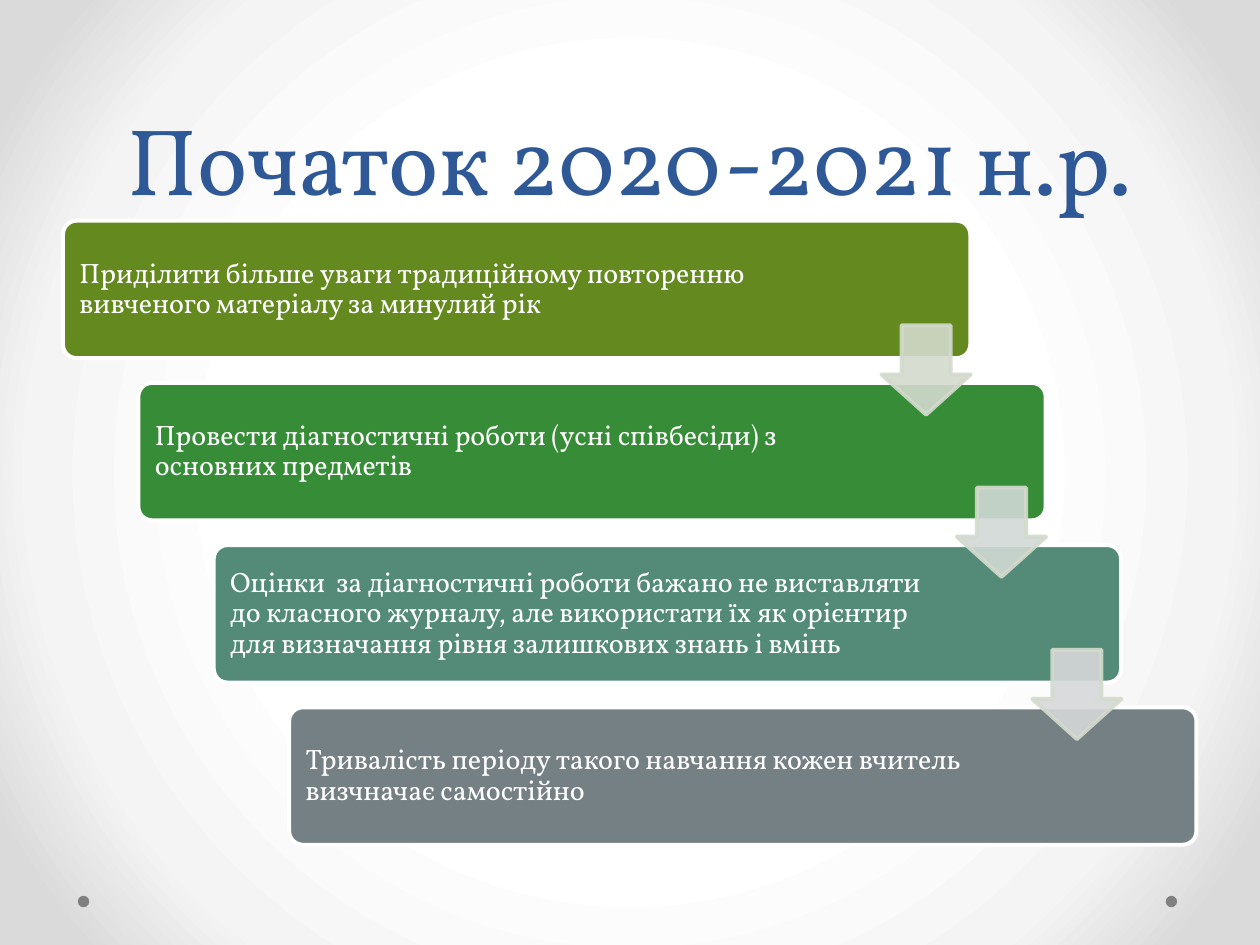
from lxml import etree
from pptx import Presentation
from pptx.dml.color import RGBColor
from pptx.enum.shapes import MSO_SHAPE
from pptx.enum.text import MSO_ANCHOR, PP_ALIGN
from pptx.oxml import parse_xml
from pptx.oxml.ns import nsdecls, qn
from pptx.util import Cm, Pt

ROUNDED, DOWN_ARROW, DOT = MSO_SHAPE.ROUNDED_RECTANGLE, MSO_SHAPE.DOWN_ARROW, MSO_SHAPE.OVAL
MIDDLE, BOTTOM = MSO_ANCHOR.MIDDLE, MSO_ANCHOR.BOTTOM
LEFT, CENTER = PP_ALIGN.LEFT, PP_ALIGN.CENTER

COLORS = {"title": "2F5897", "white": "FFFFFF", "dot": "808080", "arrow_line": "D3DACD"}
BACKDROP = [(50, "FFFFFF"), (76, "F4F4F4"), (92, "DADADA")]

# Step text, box colour, colour of the arrow to the next step
STEPS = [
    ("Приділити більше уваги традиційному повторенню вивченого матеріалу за минулий рік",
     "63891F", "D3DACD"),
    ("Провести діагностичні роботи (усні співбесіди) з основних предметів",
     "378D37", "D2D9D5"),
    ("Оцінки  за діагностичні роботи бажано не виставляти до класного журналу, "
     "але використати їх як орієнтир для визначання рівня залишкових знань і вмінь",
     "538B78", "D6D8D9"),
    ("Тривалість періоду такого навчання кожен вчитель визчначає самостійно",
     "758085", None),
]
STEP_LEFT, STEP_TOP, STEP_WIDTH, STEP_HEIGHT = 1.27, 4.45, 18.29, 2.77
SHIFT_X, SHIFT_Y = 1.52, 3.27
ARROW_X, ARROW_Y, ARROW_SIZE = 16.5, 2.11, 1.8

TITLE_FORMAT = {
    "frame": {"word_wrap": True, "vertical_anchor": BOTTOM},
    "paragraph": {"alignment": CENTER, "line_spacing": Pt(58)},
    "font": {"name": "Vollkorn", "size": Pt(54)},
    "color": COLORS["title"],
}
STEP_FORMAT = {
    "frame": {"word_wrap": True, "vertical_anchor": MIDDLE,
              "margin_left": Cm(0.25), "margin_right": Cm(3.58),
              "margin_top": Cm(0.25), "margin_bottom": Cm(0.25)},
    "paragraph": {"alignment": LEFT, "line_spacing": 0.9},
    "font": {"name": "Vollkorn", "size": Pt(16)},
    "color": COLORS["white"],
}


def write(shape, text, look):
    frame = shape.text_frame
    paragraph = frame.paragraphs[0]
    run = paragraph.add_run()
    run.text = text
    for target, part in ((frame, "frame"), (paragraph, "paragraph"), (run.font, "font")):
        for attribute, value in look[part].items():
            setattr(target, attribute, value)
    run.font.color.rgb = RGBColor.from_string(look["color"])


def add_filled(kind, box, fill, line=None, adjustments=()):
    """Add a flat preset shape; box is left, top, width, height in cm."""
    shape = slide.shapes.add_shape(kind, *map(Cm, box))
    shape.shadow.inherit = False
    shape.fill.solid()
    shape.fill.fore_color.rgb = RGBColor.from_string(fill)
    if line:
        shape.line.color.rgb = RGBColor.from_string(line)
        shape.line.width = Pt(2.25)
    else:
        shape.line.fill.background()
    for index, value in enumerate(adjustments):
        shape.adjustments[index] = value
    return shape


prs = Presentation()
prs.slide_width, prs.slide_height = Cm(25.4), Cm(19.05)
slide = prs.slides.add_slide(prs.slide_layouts[6])

# Radial background
slide.background.fill.gradient()
stops = "".join(f'<a:gs pos="{position * 1000}"><a:srgbClr val="{color}"/></a:gs>'
                for position, color in BACKDROP)
radial = parse_xml(
    f'<a:gradFill {nsdecls("a")} rotWithShape="1"><a:gsLst>{stops}</a:gsLst>'
    '<a:path path="circle"><a:fillToRect l="50000" t="50000" r="50000" b="50000"/></a:path>'
    '</a:gradFill>')
linear = next(slide.element.iter(qn("a:gradFill")))
linear.getparent().replace(linear, radial)

for dot_left in (23.5, 1.57):
    add_filled(DOT, (dot_left, 18.06, 0.23, 0.23), COLORS["dot"])

title = slide.shapes.add_textbox(Cm(1.27), Cm(0), Cm(22.86), Cm(4.45))
write(title, "Початок 2020-2021 н.р.", TITLE_FORMAT)

# Staircase of steps
for i, (text, fill, _) in enumerate(STEPS):
    box = (STEP_LEFT + i * SHIFT_X, STEP_TOP + i * SHIFT_Y, STEP_WIDTH, STEP_HEIGHT)
    step = add_filled(ROUNDED, box, fill, COLORS["white"], [0.1])
    write(step, text, STEP_FORMAT)

# Translucent arrows lie over the steps they join
for i, (_, _, fill) in enumerate(STEPS[:-1]):
    box = (STEP_LEFT + ARROW_X + i * SHIFT_X, STEP_TOP + ARROW_Y + i * SHIFT_Y,
           ARROW_SIZE, ARROW_SIZE)
    # The head length comes first, the shaft width second
    arrow = add_filled(DOWN_ARROW, box, fill, COLORS["arrow_line"], [0.55, 0.45])
    for color in arrow.element.spPr.iter(qn("a:srgbClr")):
        etree.SubElement(color, qn("a:alpha")).set("val", "90000")

prs.save("out.pptx")
